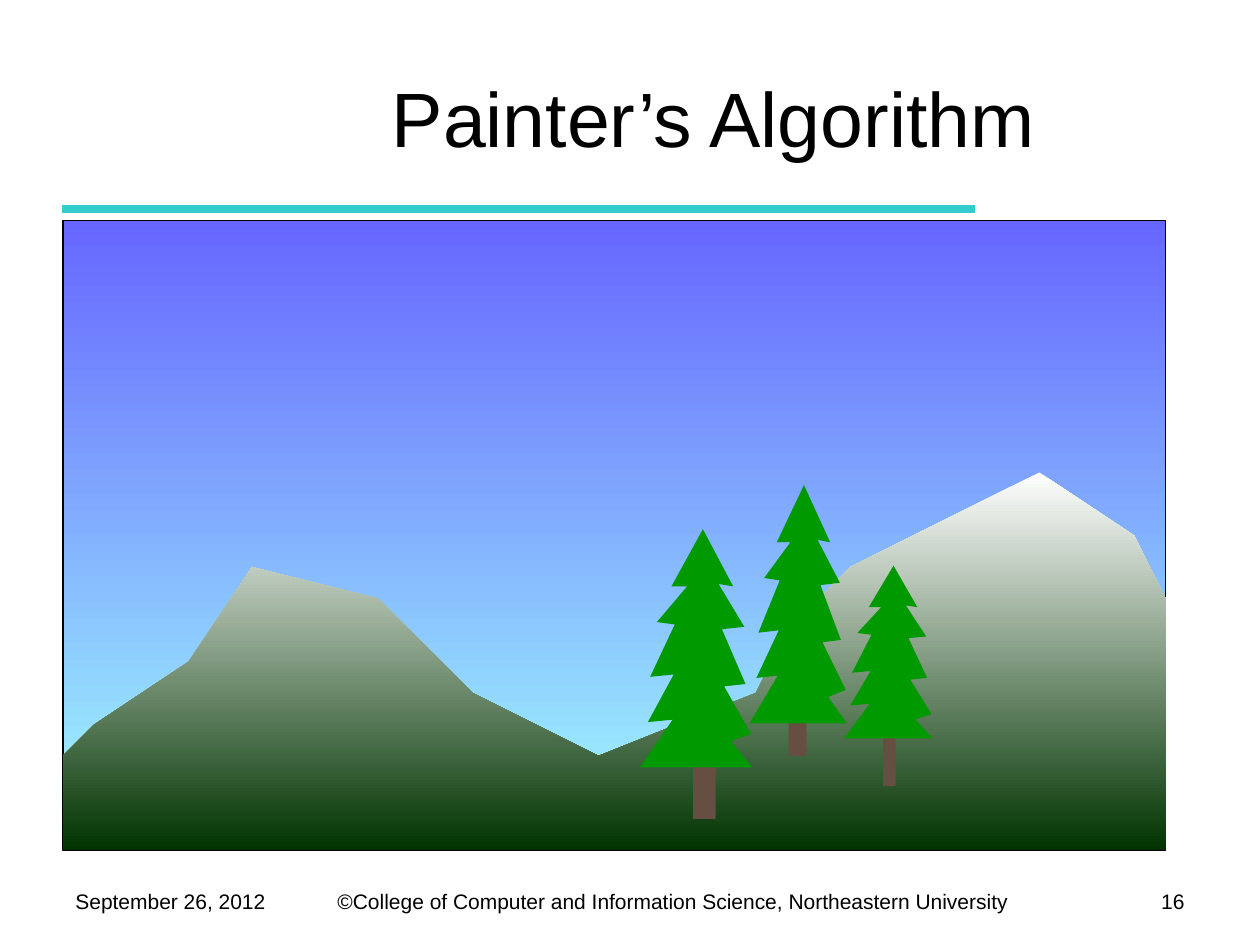
"""Build the Painter's Algorithm slide: sky, mountains and three trees."""
import pptx
import pptx.dml.color
import pptx.enum.shapes
import pptx.enum.text
import pptx.oxml
import pptx.util

COLOURS = {
    "text": "000000", "rule": "33CCCC", "sky top": "6666FF", "sky bottom": "A1FDFD",
    "peak": "FFFFFF", "valley": "003300", "trunk": "674E43", "leaves": "009900",
}
WIDTH, HEIGHT = 10, 7.5
CELL = 0.25
SCENE_LEFT, SCENE_TOP = 2 * CELL, 7 * CELL
COLUMNS, ROWS = 35, 20
FOOTER_TOP = 7
TEXTS = [
    ("©College of Computer and Information Science, Northeastern University",
     (2.58, FOOTER_TOP, 5.66, 0.3), {}),
    ("September 26, 2012", (0.5, FOOTER_TOP, 1.75, 0.33), {}),
    ("16", (8.67, FOOTER_TOP, 0.83, 0.35), {"align": "RIGHT"}),
    ("Painter’s Algorithm", (1.83, 0.3, 7.67, 1.25),
     {"size": 44, "align": "CENTER", "anchor": "MIDDLE"}),
]
RULE = (0.49, 1.66, 7.74, 1.66)
RIDGE = [
    (0, 17), (1, 16), (4, 14), (6, 11), (10, 12), (13, 15), (17, 17), (22, 15),
    (23, 13), (25, 11), (29, 9), (31, 8), (34, 10), (35, 12), (35, 20), (0, 20),
]
TREE_PERCENT = [
    (56, 0), (28, 24), (42, 24), (15, 39), (31, 40), (9, 62), (30, 61), (7, 81),
    (29, 80), (0, 100), (100, 100), (81, 89), (99, 86), (75, 66), (94, 65),
    (73, 42), (93, 41), (70, 23), (83, 24),
]
TREES = [
    {"trunk": (5.5, 4.75, 0.18, 1.75), "leaves": (5.08, 4.2, 0.89, 1.89)},
    {"trunk": (6.26, 4.42, 0.14, 1.58), "leaves": (5.95, 3.85, 0.77, 1.89)},
    {"trunk": (7.01, 5.04, 0.1, 1.2), "leaves": (6.7, 4.49, 0.7, 1.37)},
]


def inches(lengths):
    return [pptx.util.Inches(length) for length in lengths]


def rgb(name):
    return pptx.dml.color.RGBColor.from_string(COLOURS[name])


def add_text(slide, text, box, size=12, align="LEFT", anchor="TOP"):
    frame = slide.shapes.add_textbox(*inches(box)).text_frame
    frame.word_wrap = True
    frame.vertical_anchor = getattr(pptx.enum.text.MSO_ANCHOR, anchor)
    paragraph = frame.paragraphs[0]
    paragraph.text = text
    paragraph.alignment = getattr(pptx.enum.text.PP_ALIGN, align)
    paragraph.font.size = pptx.util.Pt(size)
    paragraph.font.name = "Arial"
    paragraph.font.color.rgb = rgb("text")


def paint(shape, *names, outline=None):
    shape.shadow.inherit = False
    if len(names) == 1:
        shape.fill.solid()
        shape.fill.fore_color.rgb = rgb(names[0])
    else:
        shape.fill.gradient()
        shape.fill.gradient_angle = 270
        for stop, name in zip(shape.fill.gradient_stops, names):
            stop.color.rgb = rgb(name)
    if outline:
        shape.line.color.rgb = rgb(outline)
        shape.line.width = pptx.util.Pt(0.75)
    else:
        shape.line.fill.background()


def add_rectangle(slide, box):
    return slide.shapes.add_shape(pptx.enum.shapes.MSO_SHAPE.RECTANGLE, *inches(box))


def add_outline(slide, points, left, top, x_unit, y_unit):
    corners = [inches((left + x * x_unit, top + y * y_unit)) for x, y in points]
    builder = slide.shapes.build_freeform(*corners[0])
    builder.add_line_segments(corners[1:], close=True)
    return builder.convert_to_shape()


def add_rule(slide):
    rule = slide.shapes.add_connector(
        pptx.enum.shapes.MSO_CONNECTOR.STRAIGHT, *inches(RULE))
    rule.line.color.rgb = rgb("rule")
    rule.line.width = pptx.util.Pt(4.5)
    rule._element.spPr.append(pptx.oxml.parse_xml(
        '<a:effectLst xmlns:a="http://schemas.openxmlformats.org/drawingml/2006/main"/>'))


def main():
    deck = pptx.Presentation()
    deck.slide_width, deck.slide_height = inches((WIDTH, HEIGHT))
    slide = deck.slides.add_slide(deck.slide_layouts[6])
    add_rule(slide)
    for text, box, style in TEXTS:
        add_text(slide, text, box, **style)
    sky = add_rectangle(slide, (SCENE_LEFT, SCENE_TOP, COLUMNS * CELL, ROWS * CELL))
    paint(sky, "sky top", "sky bottom", outline="text")
    mountains = add_outline(slide, RIDGE, SCENE_LEFT, SCENE_TOP, CELL, CELL)
    paint(mountains, "peak", "valley")
    for tree in TREES:
        paint(add_rectangle(slide, tree["trunk"]), "trunk")
    for tree in TREES:
        left, top, width, height = tree["leaves"]
        leaves = add_outline(slide, TREE_PERCENT, left, top, width / 100, height / 100)
        paint(leaves, "leaves")
    deck.save("out.pptx")


if __name__ == "__main__":
    main()
